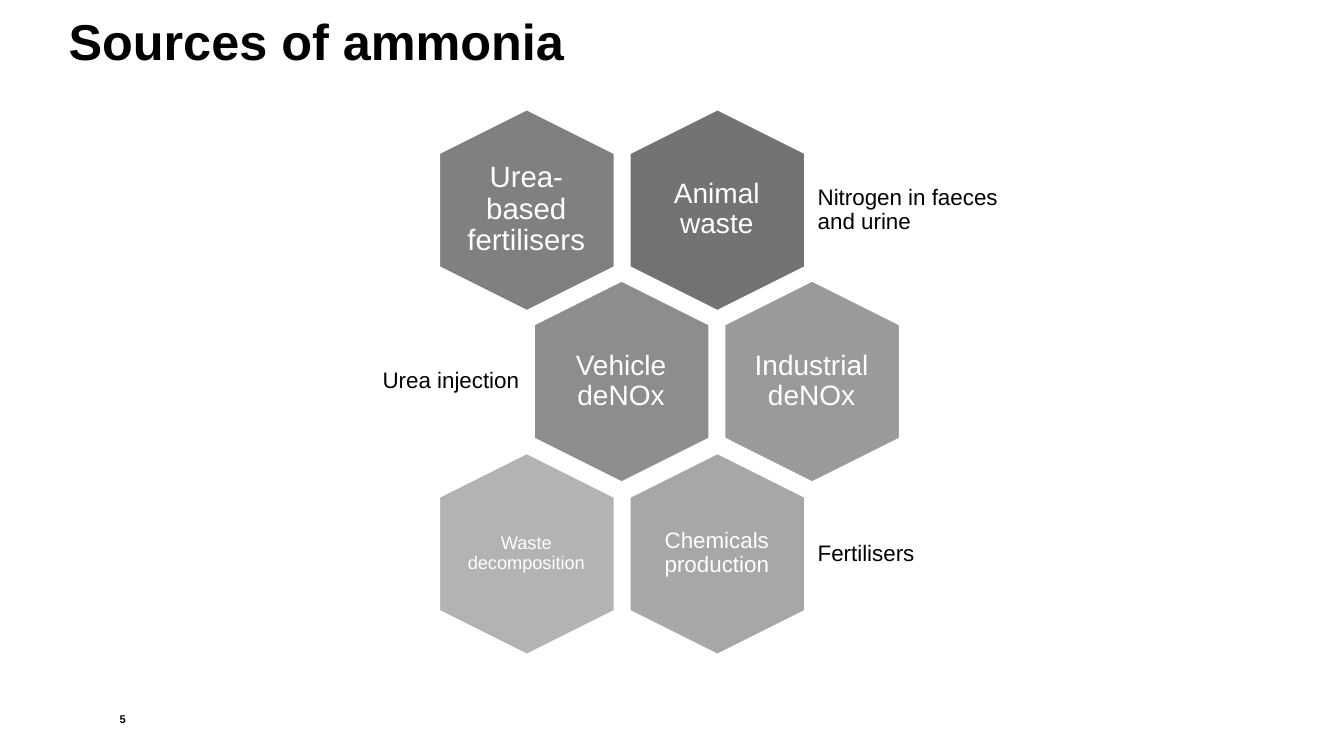
"""Build the slide on sources of ammonia as a honeycomb of hexagons."""
import pptx
import pptx.dml.color
import pptx.enum.shapes
import pptx.enum.text
import pptx.util

ALIGN = pptx.enum.text.PP_ALIGN
ANCHOR = pptx.enum.text.MSO_ANCHOR
SCALE = 9144


def px(num):
    return pptx.util.Emu(num * SCALE)


def shade(code):
    return pptx.dml.color.RGBColor.from_string(code)


def write(shape, text, size=16, color="000000", bold=False, align=ALIGN.LEFT,
          anchor=ANCHOR.MIDDLE, inset=0, lead=0.9):
    frame = shape.text_frame
    frame.word_wrap = True
    frame.auto_size = pptx.enum.text.MSO_AUTO_SIZE.NONE
    frame.vertical_anchor = anchor
    frame.margin_left = frame.margin_right = px(inset)
    frame.margin_top = frame.margin_bottom = px(inset)
    frame.text = text
    para = frame.paragraphs[0]
    para.alignment = align
    para.line_spacing = lead
    para.space_before = pptx.util.Pt(0)
    font = para.runs[0].font
    font.name = "Arial"
    font.size = pptx.util.Pt(size)
    font.bold = bold
    font.color.rgb = shade(color)


class Deck:
    def __init__(self, wide, high):
        self.show = pptx.Presentation()
        self.show.slide_width, self.show.slide_height = px(wide), px(high)
        self.slide = self.show.slides.add_slide(self.show.slide_layouts[5])
        self.white = "FFFFFF"

    def title(self, text, left, top, wide, high):
        head = self.slide.shapes.title
        head.left, head.top = px(left), px(top)
        head.width, head.height = px(wide), px(high)
        write(head, text, size=36, bold=True, anchor=ANCHOR.TOP)

    def label(self, text, left, top, wide, high, **style):
        box = self.slide.shapes.add_textbox(px(left), px(top), px(wide), px(high))
        write(box, text, **style)

    def cell(self, text, left, top, fill, size, inset):
        hexa = self.slide.shapes.add_shape(
            pptx.enum.shapes.MSO_SHAPE.HEXAGON, px(left), px(top), px(201), px(175))
        hexa.rotation = 90
        hexa.shadow.inherit = False
        hexa.fill.solid()
        hexa.fill.fore_color.rgb = shade(fill)
        hexa.line.color.rgb = shade(self.white)
        hexa.line.width = pptx.util.Pt(2)
        self.label(text, left + 40, top + 18, 120, 138, size=size,
                   color=self.white, align=ALIGN.CENTER, inset=inset)


def main():
    deck = Deck(1333, 750)
    deck.title("Sources of ammonia", 68, 17, 1197, 66)

    cells = [
        ("Animal waste", 0, 1, "737373", 20, 8),
        ("Urea-based fertilisers", 0, 0, "808080", 21, 0),
        ("Vehicle deNOx", 1, 0, "8D8D8D", 20, 8),
        ("Industrial deNOx", 1, 1, "9A9A9A", 20, 0),
        ("Chemicals production", 2, 1, "A7A7A7", 16, 7),
        ("Waste decomposition", 2, 0, "B3B3B3", 13, 0),
    ]
    tops = [121 + row * 341 // 2 for row in range(3)]
    for text, row, col, fill, size, inset in cells:
        left = 422 + col * 189 + row % 2 * 94
        deck.cell(text, left, tops[row], fill, size, inset)

    notes = [
        ("Nitrogen in faeces and urine", 0, 804, 224, ALIGN.LEFT),
        ("Urea injection", 1, 305, 217, ALIGN.RIGHT),
        ("Fertilisers", 2, 804, 224, ALIGN.LEFT),
    ]
    for text, row, left, wide, align in notes:
        deck.label(text, left, tops[row] + 27, wide, 121, align=align, inset=7)

    deck.label("5", 68, 678, 57, 42, size=8, bold=True, align=ALIGN.RIGHT,
               anchor=ANCHOR.BOTTOM, lead=0.95)
    deck.show.save("out.pptx")


if __name__ == "__main__":
    main()
